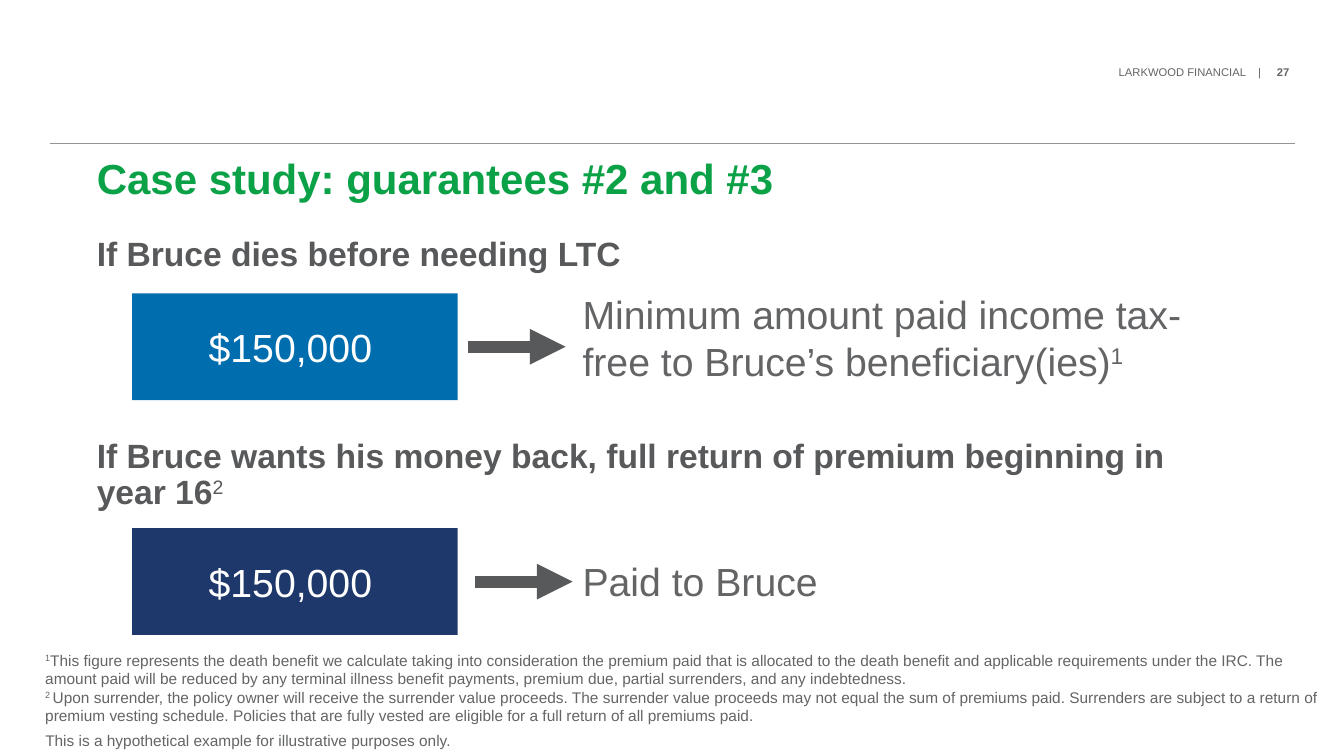
from dataclasses import dataclass

from lxml import etree
from pptx import Presentation
from pptx.dml.color import RGBColor
from pptx.enum.shapes import MSO_CONNECTOR, MSO_SHAPE
from pptx.enum.text import MSO_ANCHOR, PP_ALIGN
from pptx.oxml.ns import qn
from pptx.util import Emu, Inches, Pt

RECTANGLE = MSO_SHAPE.RECTANGLE
STRAIGHT = MSO_CONNECTOR.STRAIGHT
LEFT, RIGHT = PP_ALIGN.LEFT, PP_ALIGN.RIGHT
TOP, MIDDLE = MSO_ANCHOR.TOP, MSO_ANCHOR.MIDDLE
SLIDE_WIDTH, SLIDE_HEIGHT = Inches(13.33), Inches(7.5)


@dataclass(frozen=True)
class Theme:
    font: str = "Arial"
    title: str = "0AA147"
    heading: str = "58595B"
    body: str = "636466"
    rule: str = "929497"
    white: str = "FFFFFF"
    blue: str = "006DAF"
    navy: str = "1E386B"
    title_size: float = 30
    heading_size: float = 24
    case_size: float = 28
    note_size: float = 11
    header_size: float = 8


@dataclass(frozen=True)
class Box:
    """Shares of the slide's width and height, in percent."""
    left: float
    top: float
    width: float
    height: float

    def inner(self, left, top, width, height):
        return Box(self.left + left, self.top + top, width, height)

    def lengths(self):
        return (across(self.left), down(self.top),
                across(self.width), down(self.height))


THEME = Theme()


def across(share):
    return Emu(round(SLIDE_WIDTH * share / 100))


def down(share):
    return Emu(round(SLIDE_HEIGHT * share / 100))


def color(value):
    return RGBColor.from_string(value)


def write_text(shape, paragraphs, size, fill, bold=False, align=LEFT, anchor=TOP,
               line=None, insets=(0.1, 0.05, 0.1, 0.05), tab=None):
    frame = shape.text_frame
    frame.word_wrap = True
    frame.vertical_anchor = anchor
    (frame.margin_left, frame.margin_top,
     frame.margin_right, frame.margin_bottom) = map(Inches, insets)
    for index, runs in enumerate(paragraphs):
        paragraph = frame.add_paragraph() if index else frame.paragraphs[0]
        paragraph.alignment = align
        if line:
            paragraph.line_spacing = Pt(line)
        if tab:
            properties = paragraph._p.get_or_add_pPr()
            tabs = etree.SubElement(properties, qn("a:tabLst"))
            etree.SubElement(tabs, qn("a:tab"), pos=str(Inches(tab)), algn="l")
        for text, style in runs:
            run = paragraph.add_run()
            run.text = text
            run.font.name = THEME.font
            run.font.size = Pt(size)
            run.font.bold = style == "bold" or (bold and style != "super")
            run.font.color.rgb = color(fill)
            if style == "super":
                run._r.get_or_add_rPr().set("baseline", "30000")


def add_text(slide, box, paragraphs, **style):
    write_text(slide.shapes.add_textbox(*box.lengths()), paragraphs, **style)


def add_line(slide, left, top, length, fill, width, arrow=False):
    connector = slide.shapes.add_connector(
        STRAIGHT, across(left), down(top), across(left + length), down(top))
    connector.line.color.rgb = color(fill)
    connector.line.width = Pt(width)
    if arrow:
        etree.SubElement(connector.line._get_or_add_ln(), qn("a:tailEnd"),
                         type="triangle")
    etree.SubElement(connector._element.spPr, qn("a:effectLst"))


def add_header(slide, box):
    add_text(slide, box.inner(75.24, 0, 16.95, 2),
             [[("LARKWOOD FINANCIAL    |\t", ""), ("27", "bold")]],
             size=THEME.header_size, fill=THEME.body, align=RIGHT,
             insets=(0, 0.01, 0, 0), tab=1.57)
    add_line(slide, box.left, box.top + box.height, box.width, THEME.rule, 0.5)


def add_heading(slide, box, runs, size, fill, line):
    add_text(slide, box, [runs], size=size, fill=fill, bold=True, line=line,
             insets=(0, 0, 0, 0))


def add_case(slide, box, fill, arrow_left, result_top, result_height, result):
    amount = slide.shapes.add_shape(
        RECTANGLE, *box.inner(0, 0, 24.23, box.height).lengths())
    amount.shadow.inherit = False
    amount.fill.solid()
    amount.fill.fore_color.rgb = color(fill)
    amount.line.fill.background()
    write_text(amount, [[("$150,000", "")]], size=THEME.case_size,
               fill=THEME.white, anchor=MIDDLE, insets=(0.76, 0.05, 0.1, 0.05))
    add_line(slide, box.left + arrow_left, box.top + box.height / 2, 7.28,
             THEME.heading, 8.5, arrow=True)
    add_text(slide, box.inner(32.78, result_top, 47.71, result_height), [result],
             size=THEME.case_size, fill=THEME.body)


def add_notes(slide, box):
    style = {"size": THEME.note_size, "fill": THEME.body}
    add_text(slide, box.inner(0, 0, box.width, 11.2), [
        [("1", "super"),
         ("This figure represents the death benefit we calculate taking into "
          "consideration the premium paid that is allocated to the death benefit "
          "and applicable requirements under the IRC. The amount paid will be "
          "reduced by any terminal illness benefit payments, premium due, partial "
          "surrenders, and any indebtedness.", "")],
        [("2 ", "super"),
         ("Upon surrender, the policy owner will receive the surrender value "
          "proceeds. The surrender value proceeds may not equal the sum of "
          "premiums paid. Surrenders are subject to a return of premium vesting "
          "schedule. Policies that are fully vested are eligible for a full "
          "return of all premiums paid.", "")],
    ], **style)
    add_text(slide, box.inner(0, 10.53, 53.71, 3.87),
             [[("This is a hypothetical example for illustrative purposes only.",
                "")]], **style)


def build_case_study(presentation):
    slide = presentation.slides.add_slide(presentation.slide_layouts[6])
    add_header(slide, Box(3.75, 8.53, 92.57, 10.4))
    add_heading(slide, Box(7.2, 21.07, 85, 7),
                [("Case study: guarantees #2 and #3", "")],
                THEME.title_size, THEME.title, 31)
    headings = [
        (31.33, 5, [("If Bruce dies before needing LTC", "")]),
        (58, 10, [("If Bruce wants his money back, full return of premium "
                   "beginning in year 16", ""), ("2", "super")]),
    ]
    for top, height, runs in headings:
        add_heading(slide, Box(7.2, top, 85, height), runs,
                    THEME.heading_size, THEME.heading, 26)
    add_case(slide, Box(9.83, 38.8, 80.49, 14.13), THEME.blue, 24.98, -1.07, 13.87,
             [("Minimum amount paid income tax-free to Bruce’s beneficiary(ies)",
               ""), ("1", "super")])
    add_case(slide, Box(9.83, 69.87, 80.49, 14.13), THEME.navy, 25.5, 3.2, 7.6,
             [("Paid to Bruce", "")])
    add_notes(slide, Box(2.63, 85.47, 96.62, 14.4))


def main():
    presentation = Presentation()
    presentation.slide_width = SLIDE_WIDTH
    presentation.slide_height = SLIDE_HEIGHT
    build_case_study(presentation)
    presentation.save("out.pptx")


if __name__ == "__main__":
    main()
